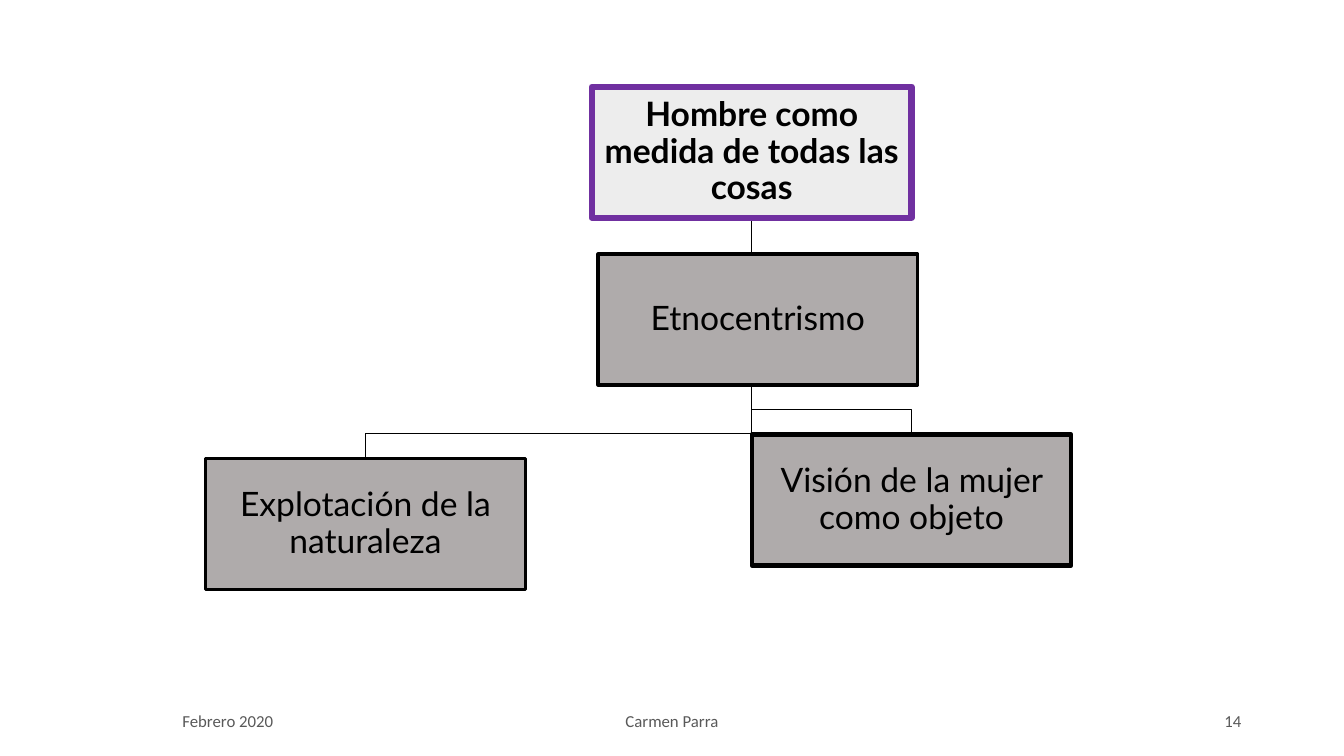
from dataclasses import dataclass

from pptx import Presentation
from pptx.dml.color import RGBColor
from pptx.enum.shapes import MSO_SHAPE
from pptx.enum.text import MSO_ANCHOR, PP_ALIGN
from pptx.slide import Slide
from pptx.text.text import TextFrame
from pptx.util import Inches, Pt


@dataclass(frozen=True)
class Theme:
    black: str = "000000"
    gray: str = "AFABAB"
    pale: str = "EDEDED"
    purple: str = "7030A0"
    footer: str = "595959"
    node_font: str = "Lato"
    footer_font: str = "Calibri"
    node_size: float = 24
    footer_size: float = 12
    branch_width: float = 0.5


@dataclass(frozen=True)
class Node:
    text: str
    left: float
    top: float
    fill: str
    line: str
    line_width: float
    bold: bool = False
    space_after: float = 10
    inset: float = 0.02


@dataclass(frozen=True)
class Footer:
    text: str
    left: float
    width: float
    align: PP_ALIGN


THEME = Theme()
SLIDE_W, SLIDE_H = Inches(13.33), Inches(7.5)
NODE_W, NODE_H = 23.78, 17.33
BEND_RISE = 3.3
FOOTER_TOP, FOOTER_H = 92.67, 5.33

ROOT = Node("Hombre como medida de todas las cosas", 44.04, 11.47,
            THEME.pale, THEME.purple, 4.5, True, 6, 0.01)
ETHNOCENTRISM = Node("Etnocentrismo", 44.49, 33.6, THEME.gray, THEME.black, 2.25)
CHILDREN = [
    Node("Explotación de la naturaleza", 15.3, 60.67, THEME.gray, THEME.black, 2.25),
    Node("Visión de la mujer como objeto", 55.93, 57.47, THEME.gray, THEME.black, 3),
]
FOOTERS = [
    Footer("Febrero 2020", 12.83, 20.93, PP_ALIGN.LEFT),
    Footer("Carmen Parra", 38.11, 23.78, PP_ALIGN.CENTER),
    Footer("14", 66.24, 26.86, PP_ALIGN.RIGHT),
]


def across(percent: float) -> int:
    return round(SLIDE_W * percent / 100)


def down(percent: float) -> int:
    return round(SLIDE_H * percent / 100)


def write(tf: TextFrame, text: str, align: PP_ALIGN, font: str, size: float,
          color: str, bold: bool = False) -> None:
    tf.word_wrap = True
    tf.vertical_anchor = MSO_ANCHOR.MIDDLE
    p = tf.paragraphs[0]
    p.alignment = align
    r = p.add_run()
    r.text = text
    r.font.name = font
    r.font.size = Pt(size)
    r.font.bold = bold
    r.font.color.rgb = RGBColor.from_string(color)


def draw_branch(s: Slide, parent: Node, child: Node) -> None:
    trunk_x = across(parent.left + NODE_W / 2)
    child_x = across(child.left + NODE_W / 2)
    bend_y = down(child.top - BEND_RISE)
    fb = s.shapes.build_freeform(trunk_x, down(parent.top + NODE_H))
    fb.add_line_segments(
        [(trunk_x, bend_y), (child_x, bend_y), (child_x, down(child.top))],
        close=False)
    sp = fb.convert_to_shape()
    sp.shadow.inherit = False
    sp.fill.background()
    sp.line.color.rgb = RGBColor.from_string(THEME.black)
    sp.line.width = Pt(THEME.branch_width)


def draw_node(s: Slide, node: Node) -> None:
    sp = s.shapes.add_shape(MSO_SHAPE.RECTANGLE, across(node.left), down(node.top),
                            across(NODE_W), down(NODE_H))
    sp.shadow.inherit = False
    sp.fill.solid()
    sp.fill.fore_color.rgb = RGBColor.from_string(node.fill)
    sp.line.color.rgb = RGBColor.from_string(node.line)
    sp.line.width = Pt(node.line_width)
    tf = sp.text_frame
    tf.margin_left = tf.margin_right = Inches(node.inset)
    tf.margin_top = tf.margin_bottom = Inches(node.inset)
    write(tf, node.text, PP_ALIGN.CENTER, THEME.node_font, THEME.node_size,
          THEME.black, node.bold)
    p = tf.paragraphs[0]
    p.line_spacing = 0.9
    p.space_after = Pt(node.space_after)


def draw_footer(s: Slide, footer: Footer) -> None:
    sp = s.shapes.add_textbox(across(footer.left), down(FOOTER_TOP),
                              across(footer.width), down(FOOTER_H))
    write(sp.text_frame, footer.text, footer.align, THEME.footer_font,
          THEME.footer_size, THEME.footer)


def main() -> None:
    prs = Presentation()
    prs.slide_width, prs.slide_height = SLIDE_W, SLIDE_H
    s = prs.slides.add_slide(prs.slide_layouts[6])
    for child in CHILDREN:
        draw_branch(s, ROOT, child)
    for node in [ROOT, *CHILDREN, ETHNOCENTRISM]:
        draw_node(s, node)
    for footer in FOOTERS:
        draw_footer(s, footer)
    prs.save("out.pptx")


if __name__ == "__main__":
    main()
